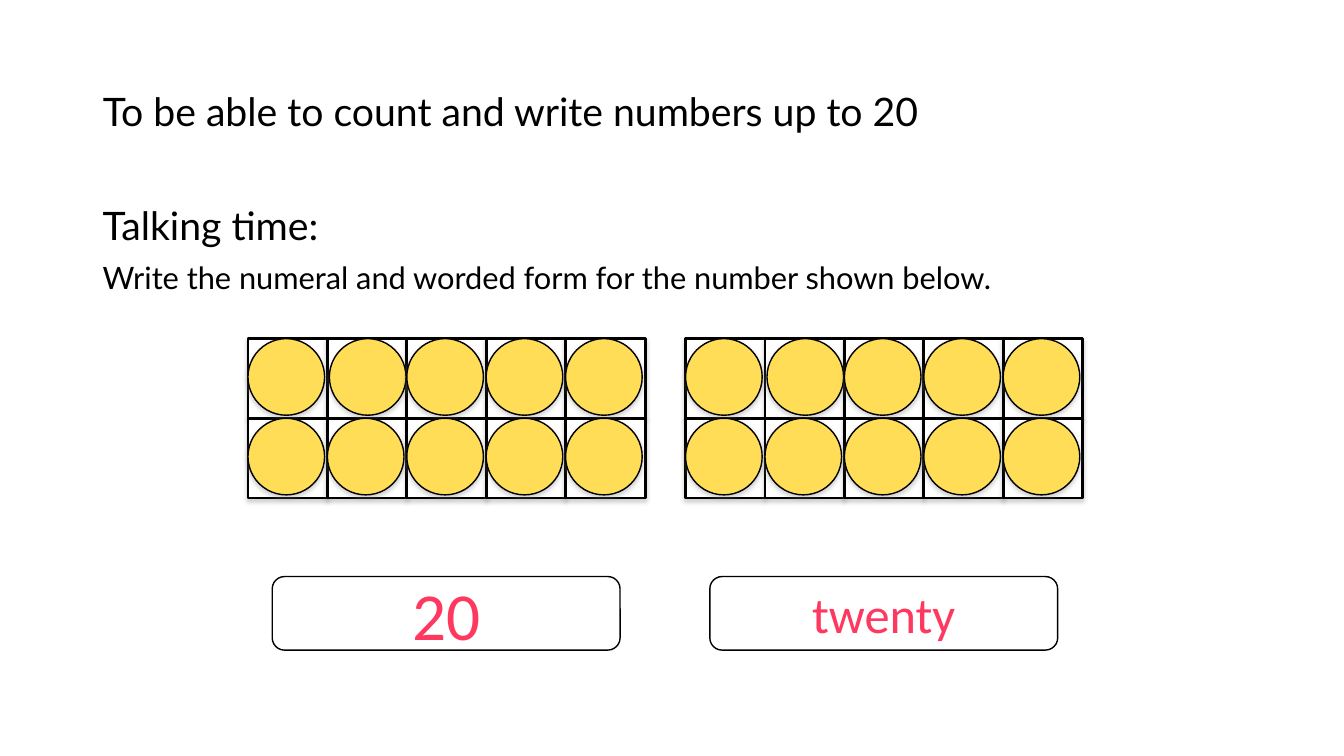
from itertools import product

from lxml import etree
from pptx import Presentation
from pptx.dml.color import RGBColor
from pptx.enum.shapes import MSO_SHAPE as Shape
from pptx.enum.text import MSO_ANCHOR as Anchor, PP_ALIGN as Align
from pptx.oxml.ns import qn
from pptx.util import Inches, Pt

ROWS, COLUMNS = 2, 5
CELL, COUNTER = 0.79, 0.76
PITCH = 3.15 / 4
FRAME_TOP = 3.36


def colour(value):
    return RGBColor.from_string(value)


def place(shape, left, top, width, height):
    shape.left, shape.top = Inches(left), Inches(top)
    shape.width, shape.height = Inches(width), Inches(height)


def write(para, text, size, font="Lato", ink="000000", align=Align.LEFT,
          spacing=None, before=0):
    para.alignment = align
    para.line_spacing = spacing
    para.space_before = Pt(before)
    span = para.add_run()
    span.text = text
    span.font.size = Pt(size)
    span.font.name = font
    span.font.color.rgb = colour(ink)


def add_shadow(shape):
    effects = shape._element.spPr.find(qn("a:effectLst"))
    shadow = etree.SubElement(effects, qn("a:outerShdw"), blurRad=str(Pt(3.1)),
                              dist=str(Pt(1.8)), dir="5400000", rotWithShape="0")
    tint = etree.SubElement(shadow, qn("a:srgbClr"), val="808080")
    etree.SubElement(tint, qn("a:alpha"), val="35000")


def add_figure(page, kind, left, top, width, height, fill="FFFFFF", line=1):
    shape = page.shapes.add_shape(kind, Inches(left), Inches(top),
                                  Inches(width), Inches(height))
    shape.shadow.inherit = False
    shape.fill.solid()
    shape.fill.fore_color.rgb = colour(fill)
    shape.line.color.rgb = colour("000000")
    shape.line.width = Pt(line)
    return shape


def add_ten_frame(page, left):
    cells = list(product(range(ROWS), range(COLUMNS)))
    for row, column in cells:
        add_shadow(add_figure(page, Shape.RECTANGLE, left + column * PITCH,
                              FRAME_TOP + row * CELL, CELL, CELL, line=2))
    for row, column in cells:
        # The second counter of the top row sits slightly to the right
        nudge = 0.02 if (row, column) == (0, 1) else 0
        add_shadow(add_figure(page, Shape.OVAL, left + column * PITCH + nudge,
                              FRAME_TOP + row * CELL, COUNTER, COUNTER,
                              fill="FFDD57"))


def add_answer(page, left, text, size):
    box = add_figure(page, Shape.ROUNDED_RECTANGLE, left, 5.72, 3.45, 0.73)
    box.text_frame.vertical_anchor = Anchor.MIDDLE
    write(box.text_frame.paragraphs[0], text, size, font="Calibri",
          ink="FF3860", align=Align.CENTER)


def add_title(page, text):
    title = page.shapes.title
    place(title, 0.92, 0.4, 9.6, 1.45)
    title.text_frame.vertical_anchor = Anchor.MIDDLE
    write(title.text_frame.paragraphs[0], text, 28, spacing=0.9)


def add_task(page, heading, instruction):
    box = page.shapes.add_textbox(Inches(0.92), Inches(2), Inches(11.5), Inches(1.2))
    frame = box.text_frame
    frame.word_wrap = True
    write(frame.paragraphs[0], heading, 28, spacing=0.9)
    write(frame.add_paragraph(), instruction, 22, spacing=0.9, before=10)


def main():
    deck = Presentation()
    deck.slide_width, deck.slide_height = Inches(13.33), Inches(7.5)
    page = deck.slides.add_slide(deck.slide_layouts[5])

    # Title and task
    add_title(page, "To be able to count and write numbers up to 20")
    add_task(page, "Talking time:",
             "Write the numeral and worded form for the number shown below.")

    # Two full ten frames
    for left in (2.46, 6.8):
        add_ten_frame(page, left)

    # Answers
    add_answer(page, 2.7, "20", 48)
    add_answer(page, 7.04, "twenty", 36)

    deck.save("out.pptx")


if __name__ == "__main__":
    main()
